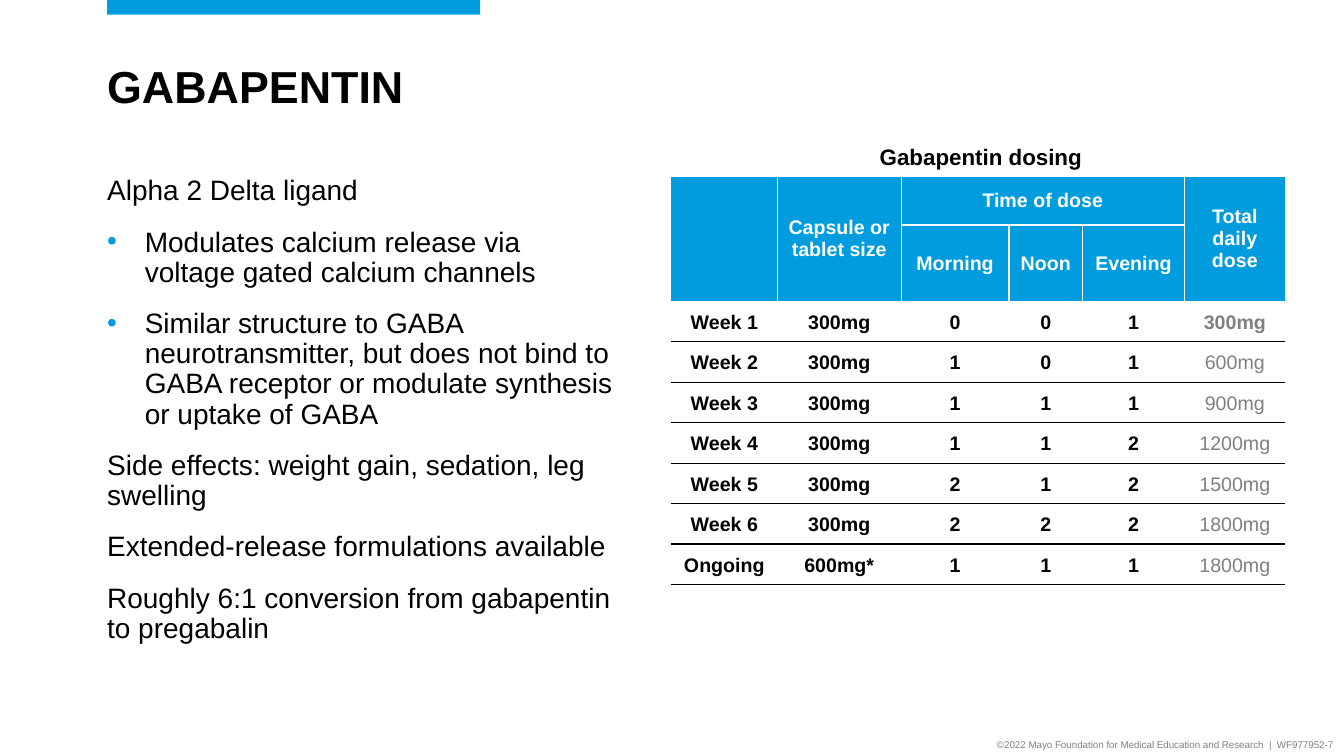
from dataclasses import dataclass

from lxml import etree
from pptx import Presentation
from pptx.dml.color import RGBColor
from pptx.enum.shapes import MSO_SHAPE
from pptx.enum.text import MSO_ANCHOR, MSO_AUTO_SIZE, PP_ALIGN
from pptx.oxml.ns import qn
from pptx.util import Cm, Pt

LEFT, CENTER, RIGHT = PP_ALIGN.LEFT, PP_ALIGN.CENTER, PP_ALIGN.RIGHT
TOP, MIDDLE = MSO_ANCHOR.TOP, MSO_ANCHOR.MIDDLE
NO_AUTOFIT = MSO_AUTO_SIZE.NONE
RECTANGLE = MSO_SHAPE.RECTANGLE
TITLE_ONLY = 5
PLAIN_TABLE_STYLE = "{2D5ABB26-0587-4C30-8999-92F81FD0307C}"


@dataclass(frozen=True)
class Theme:
    font: str = "Arial"
    accent: str = "009CDE"
    text: str = "000000"
    muted: str = "808080"
    light: str = "FFFFFF"
    title: int = 32
    body: int = 20
    caption: int = 16
    cell: int = 14
    footer: int = 7


THEME = Theme()

# Text of the left column: (has bullet, wording)
BODY = [
    (False, "Alpha 2 Delta ligand"),
    (True, "Modulates calcium release via voltage gated calcium channels"),
    (True, "Similar structure to GABA neurotransmitter, but does not bind to "
           "GABA receptor or modulate synthesis or uptake of GABA"),
    (False, "Side effects: weight gain, sedation, leg swelling"),
    (False, "Extended-release formulations available"),
    (False, "Roughly 6:1 conversion from gabapentin to pregabalin"),
]

# Dosing table
HEADER = [
    ["", "Capsule or tablet size", "Time of dose", "", "", "Total daily dose"],
    ["", "", "Morning", "Noon", "Evening", ""],
]
DOSES = [
    ["Week 1", "300mg", "0", "0", "1", "300mg"],
    ["Week 2", "300mg", "1", "0", "1", "600mg"],
    ["Week 3", "300mg", "1", "1", "1", "900mg"],
    ["Week 4", "300mg", "1", "1", "2", "1200mg"],
    ["Week 5", "300mg", "2", "1", "2", "1500mg"],
    ["Week 6", "300mg", "2", "2", "2", "1800mg"],
    ["Ongoing", "600mg*", "1", "1", "1", "1800mg"],
]
COLUMN_WIDTHS = [2.67, 3.12, 2.72, 1.85, 2.57, 2.54]
ROW_HEIGHTS = [1.22] * len(HEADER) + [1.02] * len(DOSES)
MERGES = [((0, 0), (1, 0)), ((0, 1), (1, 1)), ((0, 2), (0, 4)), ((0, 5), (1, 5))]
TIME_COLUMNS = range(2, 5)
TOTAL_COLUMN = 5


def apply_format(target, values):
    for name, value in values.items():
        setattr(target, name, value)


def write(paragraph, text, size, color=THEME.text, bold=False, **layout):
    run = paragraph.add_run()
    run.text = text
    apply_format(run.font, {"name": THEME.font, "size": Pt(size), "bold": bold})
    run.font.color.rgb = RGBColor.from_string(color)
    apply_format(paragraph, layout)


def set_frame(frame, horizontal, vertical, anchor):
    apply_format(frame, {
        "word_wrap": True, "auto_size": NO_AUTOFIT, "vertical_anchor": anchor,
        "margin_left": Cm(horizontal), "margin_right": Cm(horizontal),
        "margin_top": Cm(vertical), "margin_bottom": Cm(vertical)})


def add_text_frame(slide, box, horizontal=0.25, vertical=0.13, anchor=TOP):
    frame = slide.shapes.add_textbox(*map(Cm, box)).text_frame
    set_frame(frame, horizontal, vertical, anchor)
    return frame


def add_bullet(paragraph):
    properties = paragraph._p.get_or_add_pPr()
    properties.set("marL", str(Cm(0.95)))
    properties.set("indent", str(-Cm(0.95)))
    color = etree.SubElement(properties, qn("a:buClr"))
    etree.SubElement(color, qn("a:srgbClr"), val=THEME.accent)
    etree.SubElement(properties, qn("a:buFont"), typeface=THEME.font)
    etree.SubElement(properties, qn("a:buChar"), char="•")


def add_border(cell, side, color):
    line = etree.SubElement(cell._tc.get_or_add_tcPr(), qn(f"a:ln{side}"), w=str(Pt(1)))
    fill = etree.SubElement(line, qn("a:solidFill"))
    etree.SubElement(fill, qn("a:srgbClr"), val=color)


def add_accent_bar(slide, box):
    bar = slide.shapes.add_shape(RECTANGLE, *map(Cm, box))
    bar.shadow.inherit = False
    bar.fill.solid()
    bar.fill.fore_color.rgb = RGBColor.from_string(THEME.accent)
    bar.line.fill.background()


def add_title(slide, box):
    title = slide.shapes.title
    apply_format(title, dict(zip(("left", "top", "width", "height"), map(Cm, box))))
    set_frame(title.text_frame, 0, 0.13, TOP)
    write(title.text_frame.paragraphs[0], "GABAPENTIN", THEME.title, bold=True,
          alignment=LEFT, line_spacing=0.9)


def add_body(slide, box):
    frame = add_text_frame(slide, box, 0, 0)
    for index, (bulleted, text) in enumerate(BODY):
        paragraph = frame.add_paragraph() if index else frame.paragraphs[0]
        if bulleted:
            add_bullet(paragraph)
        write(paragraph, text, THEME.body, alignment=LEFT, line_spacing=0.9,
              space_before=Pt(15 if index else 0))


def format_header_cell(cell, row, column):
    if column > 0:
        add_border(cell, "L", THEME.light)
    if column < TOTAL_COLUMN:
        add_border(cell, "R", THEME.light)
    if column in TIME_COLUMNS:
        add_border(cell, "T" if row else "B", THEME.light)
    cell.fill.solid()
    cell.fill.fore_color.rgb = RGBColor.from_string(THEME.accent)


def add_dosing_table(slide, box):
    left, top, width, height = box

    # Caption above the grid
    caption = add_text_frame(slide, (left, top, width + 0.13, 0.94))
    write(caption.paragraphs[0], "Gabapentin dosing", THEME.caption, bold=True,
          alignment=CENTER)

    # Grid
    rows = HEADER + DOSES
    table = slide.shapes.add_table(len(rows), len(COLUMN_WIDTHS), Cm(left), Cm(top + 0.97),
                                   Cm(width), Cm(height - 0.97)).table
    table.first_row = table.horz_banding = False
    table._tbl.tblPr.find(qn("a:tableStyleId")).text = PLAIN_TABLE_STYLE
    for column, column_width in zip(table.columns, COLUMN_WIDTHS):
        column.width = Cm(column_width)
    for row, row_height in zip(table.rows, ROW_HEIGHTS):
        row.height = Cm(row_height)
    for first, last in MERGES:
        table.cell(*first).merge(table.cell(*last))

    # Cells
    for row, texts in enumerate(rows):
        for column, text in enumerate(texts):
            cell = table.cell(row, column)
            cell.vertical_anchor = MIDDLE
            if row > 0:
                apply_format(cell, {"margin_left": Cm(0.05), "margin_right": Cm(0.05),
                                    "margin_top": Cm(0.05), "margin_bottom": 0})
            color, bold = THEME.text, True
            if row < len(HEADER):
                format_header_cell(cell, row, column)
                color = THEME.light
            else:
                add_border(cell, "B", THEME.text)
                cell.fill.background()
                if column == TOTAL_COLUMN:
                    color, bold = THEME.muted, row == len(HEADER)
            if text:
                write(cell.text_frame.paragraphs[0], text, THEME.cell, color, bold,
                      alignment=CENTER)


def add_footer(slide, box):
    frame = add_text_frame(slide, box, anchor=MIDDLE)
    write(frame.paragraphs[0],
          "©2022 Mayo Foundation for Medical Education and Research  |  WF977952-7",
          THEME.footer, THEME.muted, alignment=RIGHT)


def main():
    presentation = Presentation()
    presentation.slide_width, presentation.slide_height = Cm(33.87), Cm(19.05)
    slide = presentation.slides.add_slide(presentation.slide_layouts[TITLE_ONLY])
    add_footer(slide, (23.39, 18.49, 10.46, 0.56))
    add_accent_bar(slide, (2.7, 0, 9.4, 0.37))
    add_title(slide, (2.7, 1.5, 29.69, 1.63))
    add_body(slide, (2.7, 4.45, 12.8, 13.16))
    add_dosing_table(slide, (16.92, 3.48, sum(COLUMN_WIDTHS), 0.97 + sum(ROW_HEIGHTS)))
    presentation.save("out.pptx")


if __name__ == "__main__":
    main()
